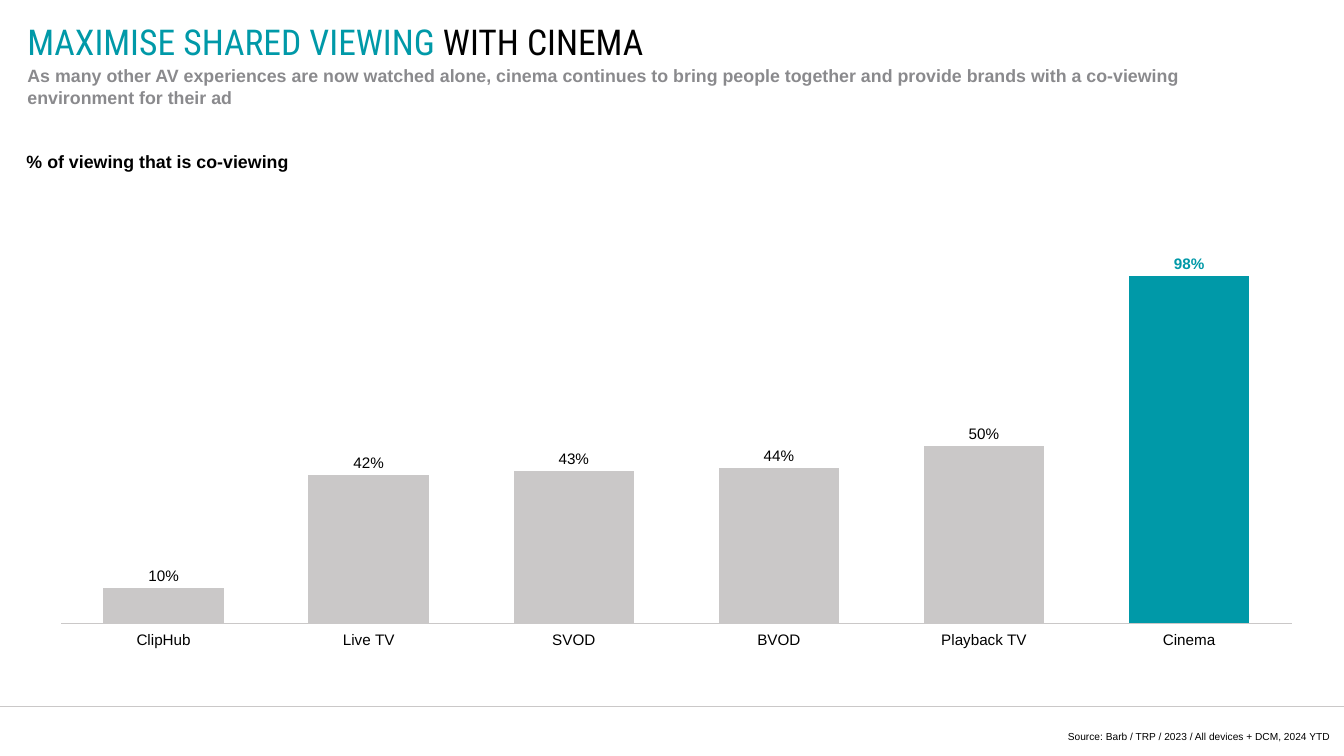
from dataclasses import dataclass
from typing import Any

from lxml.etree import SubElement
from pptx import Presentation
from pptx.chart.chart import Chart
from pptx.chart.data import CategoryChartData
from pptx.dml.color import RGBColor
from pptx.enum.chart import XL_CHART_TYPE, XL_LABEL_POSITION, XL_TICK_LABEL_POSITION, XL_TICK_MARK
from pptx.enum.shapes import MSO_CONNECTOR
from pptx.enum.text import MSO_ANCHOR, PP_ALIGN
from pptx.oxml import parse_xml
from pptx.oxml.ns import nsdecls, qn
from pptx.slide import Slide
from pptx.util import Pt

COLOURS = {"teal": "0099A8", "black": "000000", "grey": "8A8A8D", "silver": "CAC8C8"}
SLIDE_WIDTH, SLIDE_HEIGHT = 1058.4, 595.44
RULE_TOP = 556.56
CHART_BOX = (20.88, 142.56, 1009.44, 383.04)
PLOT_AREA = {"x": 0.027, "y": 0.036, "w": 0.96, "h": 0.874}
VIEWING = {"ClipHub": 0.1, "Live TV": 0.42, "SVOD": 0.43, "BVOD": 0.44, "Playback TV": 0.5, "Cinema": 0.98}
HIGHLIGHT = "Cinema"


@dataclass(frozen=True)
class TextBlock:
    box: tuple[float, float, float, float]
    runs: tuple[tuple[str, str], ...]
    size: float
    bold: bool = False
    font: str = "Arial"
    line_spacing: float | None = None
    alignment: PP_ALIGN = PP_ALIGN.LEFT
    anchor: MSO_ANCHOR = MSO_ANCHOR.TOP


TEXT_BLOCKS = (
    TextBlock((21.6, 21.6, 977.76, 22.32),
              (("MAXIMISE SHARED VIEWING ", "teal"), ("WITH CINEMA", "black")),
              28, font="Roboto Condensed", anchor=MSO_ANCHOR.MIDDLE),
    TextBlock((21.6, 51.12, 948.24, 34.56),
              (("As many other AV experiences are now watched alone, cinema continues to bring people "
                "together and provide brands with a co-viewing environment for their ad", "grey"),),
              14, bold=True, line_spacing=16.8),
    TextBlock((20.88, 120.24, 470.88, 22.32), (("% of viewing that is co-viewing", "black"),),
              14, bold=True, line_spacing=15),
    TextBlock((802.08, 567.36, 245.52, 16.56),
              (("Source: Barb / TRP / 2023 / All devices + DCM, 2024 YTD", "black"),),
              8, line_spacing=19, alignment=PP_ALIGN.RIGHT, anchor=MSO_ANCHOR.MIDDLE),
)


def colour(name: str) -> RGBColor:
    return RGBColor.from_string(COLOURS[name])


def apply_format(target: Any, values: dict[str, Any]) -> None:
    for name, value in values.items():
        setattr(target, name, value)


def format_font(font: Any, size: float, colour_name: str, bold: bool = False, name: str = "Arial") -> None:
    apply_format(font, {"name": name, "size": Pt(size), "bold": bold})
    font.color.rgb = colour(colour_name)


def add_text(slide: Slide, block: TextBlock) -> None:
    frame = slide.shapes.add_textbox(*map(Pt, block.box)).text_frame
    apply_format(frame, {
        "word_wrap": True, "vertical_anchor": block.anchor,
        "margin_left": 0, "margin_top": 0, "margin_right": 0, "margin_bottom": 0,
    })
    paragraph = frame.paragraphs[0]
    paragraph.alignment = block.alignment
    if block.line_spacing is not None:
        paragraph.line_spacing = Pt(block.line_spacing)
    for text, colour_name in block.runs:
        run = paragraph.add_run()
        run.text = text
        format_font(run.font, block.size, colour_name, block.bold, block.font)


def add_rule(slide: Slide) -> None:
    connector = slide.shapes.add_connector(
        MSO_CONNECTOR.STRAIGHT, 0, Pt(RULE_TOP), Pt(SLIDE_WIDTH), Pt(RULE_TOP))
    connector.line.color.rgb = colour("silver")
    connector.line.width = Pt(0.5)
    SubElement(connector.element.spPr, qn("a:effectLst"))


def set_plot_layout(chart: Chart) -> None:
    plot_area = chart.element.find(qn("c:chart")).find(qn("c:plotArea"))
    layout = plot_area.find(qn("c:layout"))
    if layout is not None:
        plot_area.remove(layout)
    modes = '<c:layoutTarget val="inner"/><c:xMode val="edge"/><c:yMode val="edge"/>'
    sizes = "".join(f'<c:{key} val="{value}"/>' for key, value in PLOT_AREA.items())
    plot_area.insert(0, parse_xml(
        f'<c:layout {nsdecls("c")}><c:manualLayout>{modes}{sizes}</c:manualLayout></c:layout>'))


def format_axes(chart: Chart) -> None:
    apply_format(chart.value_axis, {
        "visible": False, "has_major_gridlines": False, "minimum_scale": 0, "maximum_scale": 1.2,
    })
    axis = chart.category_axis
    apply_format(axis, {
        "major_tick_mark": XL_TICK_MARK.NONE, "minor_tick_mark": XL_TICK_MARK.NONE,
        "tick_label_position": XL_TICK_LABEL_POSITION.LOW, "has_major_gridlines": False,
    })
    format_font(axis.tick_labels.font, 12, "black")
    axis.format.line.color.rgb = colour("silver")
    axis.format.line.width = Pt(0.75)


def add_viewing_chart(slide: Slide) -> None:
    data = CategoryChartData(number_format="0%")
    data.categories = list(VIEWING)
    data.add_series("Series 1", list(VIEWING.values()))
    chart = slide.shapes.add_chart(XL_CHART_TYPE.COLUMN_CLUSTERED, *map(Pt, CHART_BOX), data).chart
    apply_format(chart, {"has_legend": False, "has_title": False})
    format_font(chart.font, 10, "black")
    format_axes(chart)
    set_plot_layout(chart)

    plot = chart.plots[0]
    apply_format(plot, {"gap_width": 70, "overlap": -27, "vary_by_categories": False})
    series = plot.series[0]
    series.format.fill.solid()
    series.format.fill.fore_color.rgb = colour("silver")
    labels = series.data_labels
    apply_format(labels, {
        "show_value": True, "number_format": "0%", "number_format_is_linked": False,
        "position": XL_LABEL_POSITION.OUTSIDE_END,
    })
    format_font(labels.font, 12, "black")

    point = series.points[list(VIEWING).index(HIGHLIGHT)]
    point.format.fill.solid()
    point.format.fill.fore_color.rgb = colour("teal")
    format_font(point.data_label.font, 12, "teal", bold=True)
    point.data_label.position = XL_LABEL_POSITION.OUTSIDE_END


def main() -> None:
    presentation = Presentation()
    apply_format(presentation, {"slide_width": Pt(SLIDE_WIDTH), "slide_height": Pt(SLIDE_HEIGHT)})
    slide = presentation.slides.add_slide(presentation.slide_layouts[6])
    add_rule(slide)
    add_viewing_chart(slide)
    for block in TEXT_BLOCKS:
        add_text(slide, block)
    presentation.save("out.pptx")


if __name__ == "__main__":
    main()
